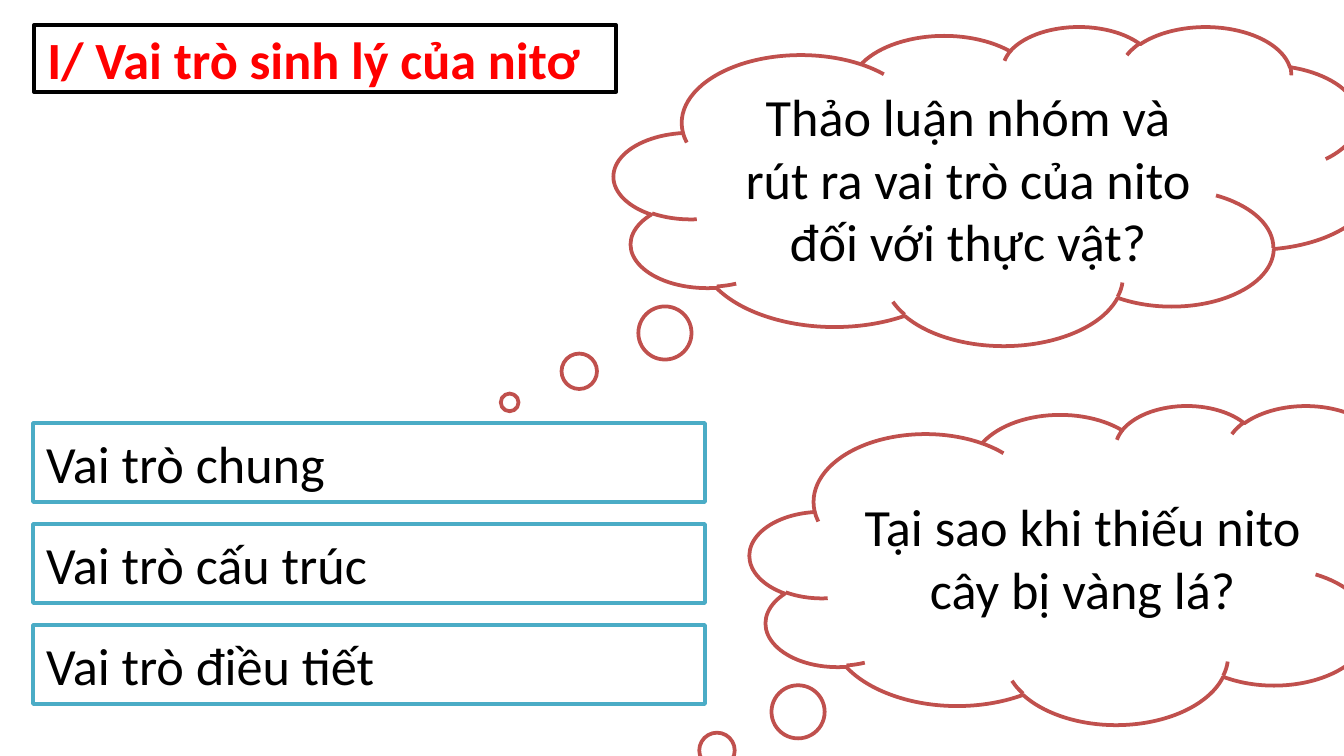
from pptx import Presentation
from pptx.dml.color import RGBColor
from pptx.enum.shapes import MSO_SHAPE
from pptx.enum.text import MSO_ANCHOR, PP_ALIGN
from pptx.util import Pt

EMU_PER_PX = 914400 / 134.4
RECTANGLE = MSO_SHAPE.RECTANGLE
CLOUD = MSO_SHAPE.CLOUD_CALLOUT
MIDDLE = MSO_ANCHOR.MIDDLE
LEFT, CENTER, JUSTIFY = PP_ALIGN.LEFT, PP_ALIGN.CENTER, PP_ALIGN.JUSTIFY

COLORS = {
    "paper": "FFFFFF",
    "ink": "000000",
    "heading": "FF0000",
    "question": "C0504D",
    "role": "4BACC6",
}
FONT = {"name": "Calibri", "size": Pt(28), "bold": False}
CLOUD_TAIL = (-0.637, 0.68)

ROLES = ["Vai trò chung", "Vai trò cấu trúc", "Vai trò điều tiết"]
ROLE_TOP, ROLE_STEP = 423, 101
QUESTIONS = [
    ((614, 26, 762, 319), "Thảo luận nhóm và rút ra vai trò của nito đối với thực vật?"),
    ((750, 405, 716, 319), "Tại sao khi thiếu nito cây bị vàng lá?"),
]


def px(length):
    return round(length * EMU_PER_PX)


def color(name):
    return RGBColor.from_string(COLORS[name])


def add_box(page, kind, place, text, outline, align, ink="ink", **font):
    """Add a white outlined shape with one paragraph of text."""
    box = page.shapes.add_shape(kind, *map(px, place))
    box.shadow.inherit = False
    box.fill.solid()
    box.fill.fore_color.rgb = color("paper")
    box.line.color.rgb = color(outline)
    box.line.width = Pt(2)

    frame = box.text_frame
    frame.word_wrap = True
    frame.vertical_anchor = MIDDLE
    para = frame.paragraphs[0]
    para.alignment = align
    span = para.add_run()
    span.text = text
    for key, value in {**FONT, **font}.items():
        setattr(span.font, key, value)
    span.font.color.rgb = color(ink)
    return box


def add_heading(page):
    add_box(page, RECTANGLE, (34, 25, 582, 67), "I/ Vai trò sinh lý của nitơ",
            "ink", LEFT, ink="heading", bold=True)


def add_question(page, place, text):
    cloud = add_box(page, CLOUD, place, text, "question", CENTER)
    for index, value in enumerate(CLOUD_TAIL):
        cloud.adjustments[index] = value


def add_roles(page):
    for index, role in enumerate(ROLES):
        place = (33, ROLE_TOP + index * ROLE_STEP, 672, 79)
        add_box(page, RECTANGLE, place, role, "role", JUSTIFY)


def main():
    deck = Presentation()
    deck.slide_width, deck.slide_height = px(1344), px(756)
    page = deck.slides.add_slide(deck.slide_layouts[6])
    add_heading(page)
    discussion, yellowing = QUESTIONS
    add_question(page, *discussion)
    add_roles(page)
    add_question(page, *yellowing)
    deck.save("out.pptx")


if __name__ == "__main__":
    main()
